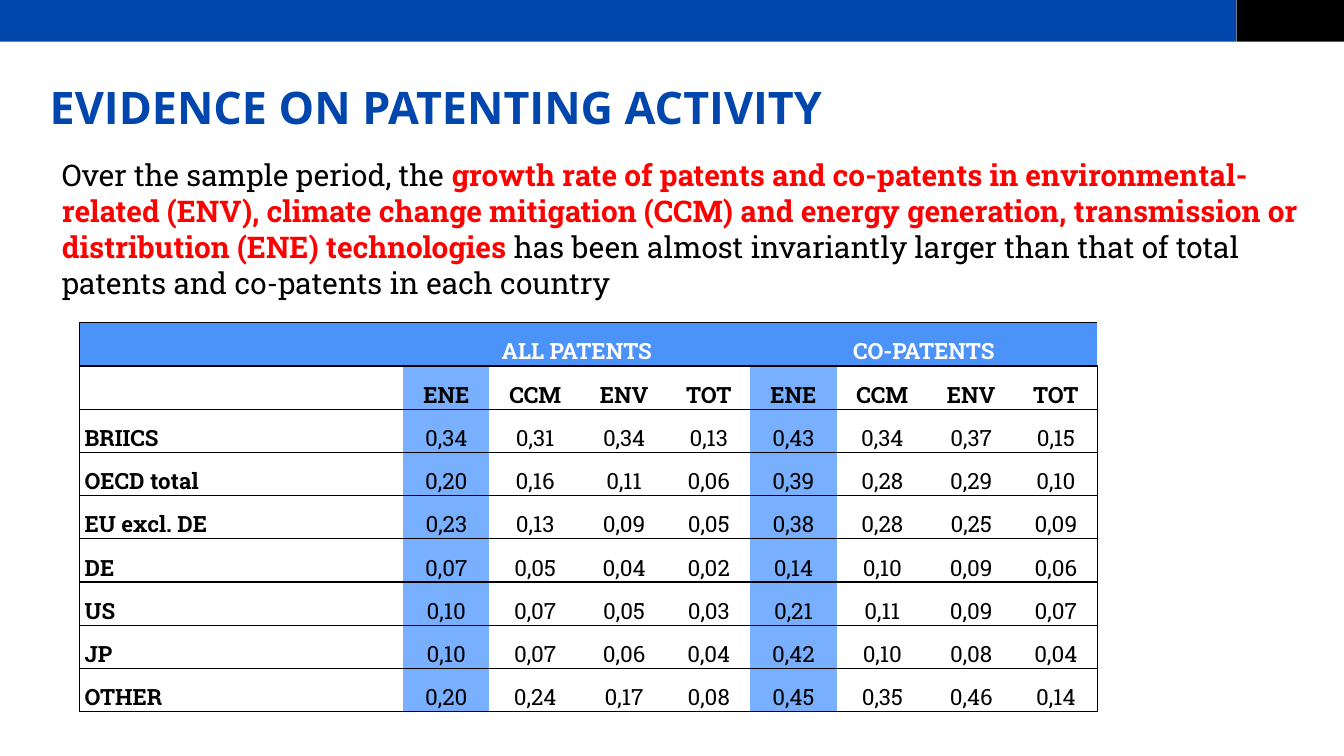
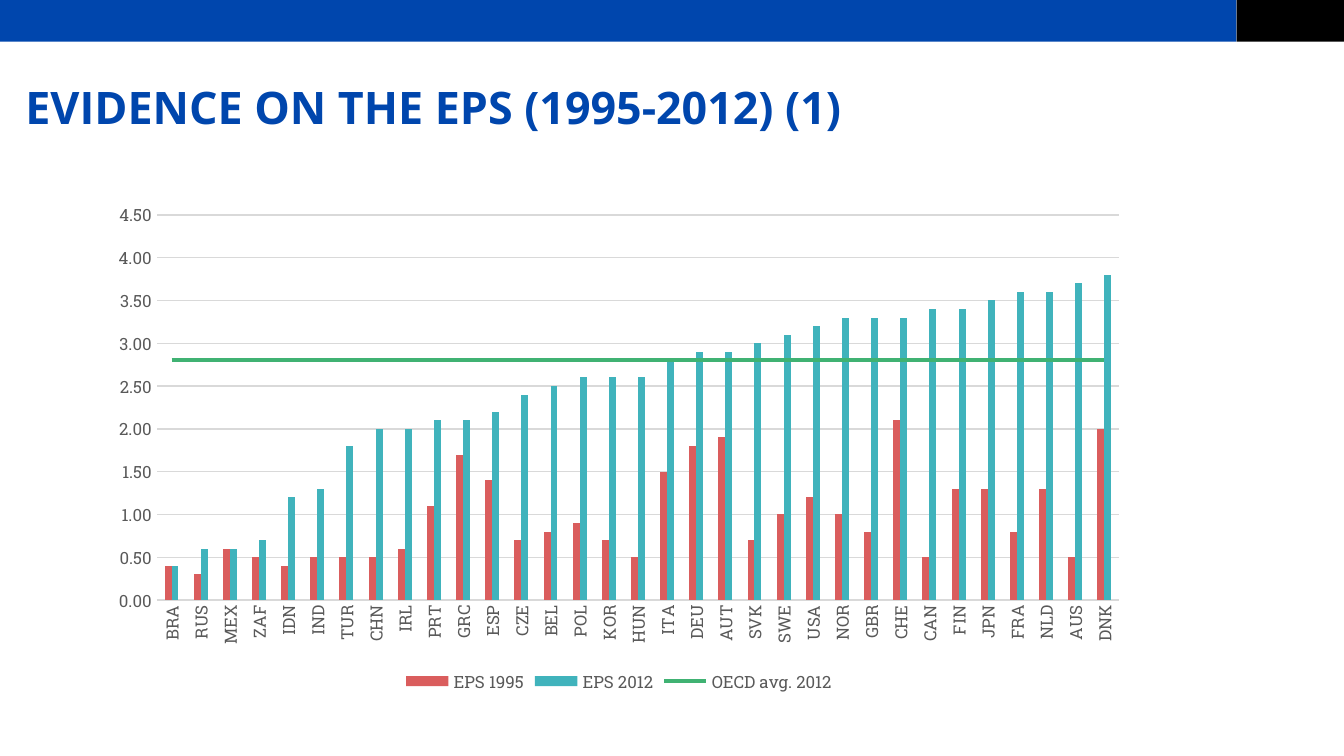
from collections import namedtuple

from lxml.etree import SubElement
from pptx import Presentation
from pptx.chart.data import CategoryChartData
from pptx.dml.color import RGBColor
from pptx.enum.chart import XL_CHART_TYPE, XL_LEGEND_POSITION, XL_MARKER_STYLE, XL_TICK_MARK
from pptx.enum.shapes import MSO_SHAPE
from pptx.enum.text import MSO_ANCHOR, MSO_AUTO_SIZE, PP_ALIGN
from pptx.oxml import parse_xml
from pptx.oxml.ns import nsdecls, qn
from pptx.util import Cm, Pt

Box = namedtuple("Box", "left top width height")

COLORS = {
    "brand": "0046AD", "black": "000000", "white": "FFFFFF", "alert": "FF0000",
    "header": "4B92F9", "highlight": "78AFFF", "label": "595959", "grid": "D9D9D9",
    "eps_1995": "DA5D5D", "eps_2012": "40B3BC", "average": "40B273",
}
TITLE_FONT, BODY_FONT = "Open Sans", "Roboto Slab"
SLIDE_WIDTH, SLIDE_HEIGHT = 25.4, 14.29
BAND_HEIGHT, BAND_SPLIT = 0.79, 23.37
SECTION_LAYOUT, TITLE_ONLY_LAYOUT = 2, 5

EVIDENCE = [
    ("Over the sample period, the ", False),
    ("growth rate of patents and co-patents in environmental-related (ENV), climate change "
     "mitigation (CCM) and energy generation, transmission or distribution (ENE) "
     "technologies ", True),
    ("has been almost invariantly larger than that of total patents and co-patents in each "
     "country", False),
]
PATENT_GROUPS = ["ALL PATENTS", "CO-PATENTS"]
TECHNOLOGIES = ["ENE", "CCM", "ENV", "TOT"]
GROWTH_RATES = {
    "BRIICS": "0,34 0,31 0,34 0,13 0,43 0,34 0,37 0,15",
    "OECD total": "0,20 0,16 0,11 0,06 0,39 0,28 0,29 0,10",
    "EU excl. DE": "0,23 0,13 0,09 0,05 0,38 0,28 0,25 0,09",
    "DE": "0,07 0,05 0,04 0,02 0,14 0,10 0,09 0,06",
    "US": "0,10 0,07 0,05 0,03 0,21 0,11 0,09 0,07",
    "JP": "0,10 0,07 0,06 0,04 0,42 0,10 0,08 0,04",
    "OTHER": "0,20 0,24 0,17 0,08 0,45 0,35 0,46 0,14",
}
REGION_WIDTH = 6.12
TECHNOLOGY_WIDTHS = [1.63, 1.73, 1.63, 1.57]

COUNTRIES = (
    "BRA RUS MEX ZAF IDN IND TUR CHN IRL PRT GRC ESP CZE BEL POL KOR HUN ITA DEU AUT SVK "
    "SWE USA NOR GBR CHE CAN FIN JPN FRA NLD AUS DNK"
).split()
EPS_1995 = [0.4, 0.3, 0.6, 0.5, 0.4, 0.5, 0.5, 0.5, 0.6, 1.1, 1.7, 1.4, 0.7, 0.8, 0.9, 0.7, 0.5,
            1.5, 1.8, 1.9, 0.7, 1, 1.2, 1, 0.8, 2.1, 0.5, 1.3, 1.3, 0.8, 1.3, 0.5, 2]
EPS_2012 = [0.4, 0.6, 0.6, 0.7, 1.2, 1.3, 1.8, 2, 2, 2.1, 2.1, 2.2, 2.4, 2.5, 2.6, 2.6, 2.6,
            2.8, 2.9, 2.9, 3, 3.1, 3.2, 3.3, 3.3, 3.3, 3.4, 3.4, 3.5, 3.6, 3.6, 3.7, 3.8]
OECD_AVERAGE = 2.8


def color(key):
    """Return the named colour."""
    return RGBColor.from_string(COLORS[key])


def style_font(font, size, key, bold=False, family=BODY_FONT):
    """Give a font its family, size, colour and weight."""
    font.name, font.size, font.bold = family, Pt(size), bold
    font.color.rgb = color(key)


def place(shape, box):
    """Move a shape into a box given in centimetres."""
    shape.left, shape.top, shape.width, shape.height = (Cm(length) for length in box)


def clear_margins(frame):
    """Remove the inner margins of a text frame."""
    frame.margin_left = frame.margin_top = frame.margin_right = frame.margin_bottom = 0


def add_bands(prs, slide):
    """Draw the top bands and move them to the slide master."""
    bands = [
        (Box(0, 0, BAND_SPLIT, BAND_HEIGHT), "brand"),
        (Box(BAND_SPLIT, 0, SLIDE_WIDTH - BAND_SPLIT, BAND_HEIGHT), "black"),
    ]
    for box, key in bands:
        band = slide.shapes.add_shape(MSO_SHAPE.RECTANGLE, *(Cm(length) for length in box))
        band.shadow.inherit = False
        band.fill.solid()
        band.fill.fore_color.rgb = color(key)
        band.line.fill.background()
        prs.slide_master.shapes.element.append(band.element)


def add_title(slide, heading, left):
    """Fill the title placeholder in the shared title style."""
    title = slide.shapes.title
    place(title, Box(left, 1.35, 21.06, 1.17))
    frame = title.text_frame
    frame.text = heading
    clear_margins(frame)
    frame.word_wrap = True
    frame.auto_size = MSO_AUTO_SIZE.SHAPE_TO_FIT_TEXT
    frame.vertical_anchor = MSO_ANCHOR.BOTTOM
    paragraph = frame.paragraphs[0]
    paragraph.alignment = PP_ALIGN.LEFT
    paragraph.line_spacing = Pt(35)
    style_font(paragraph.runs[0].font, 24, "brand", True, TITLE_FONT)


def add_evidence(slide, box):
    """Fill the body placeholder with the highlighted statement."""
    statement = slide.placeholders[1]
    place(statement, box)
    frame = statement.text_frame
    clear_margins(frame)
    frame.auto_size = MSO_AUTO_SIZE.NONE
    frame.vertical_anchor = MSO_ANCHOR.TOP
    paragraph = frame.paragraphs[0]
    paragraph.space_before, paragraph.space_after = Pt(0), Pt(4.5)
    for words, stressed in EVIDENCE:
        run = paragraph.add_run()
        run.text = words
        style_font(run.font, 16, "alert" if stressed else "black", stressed)


def set_borders(cell, sides):
    """Draw the given sides of a cell and hide the others."""
    properties = cell._tc.get_or_add_tcPr()
    for index, side in enumerate("LRTB"):
        paint = "<a:noFill/>"
        if side in sides:
            paint = f'<a:solidFill><a:srgbClr val="{COLORS["black"]}"/></a:solidFill>'
        border = f'<a:ln{side} {nsdecls("a")} w="{Pt(0.75)}">{paint}</a:ln{side}>'
        properties.insert(index, parse_xml(border))


def fill_cell(cell, words, key, bold, centred, fill):
    """Write and format one table cell."""
    cell.margin_left = cell.margin_right = Cm(0.1)
    cell.margin_top = cell.margin_bottom = 0
    cell.vertical_anchor = MSO_ANCHOR.BOTTOM
    if fill:
        cell.fill.solid()
        cell.fill.fore_color.rgb = color(fill)
    else:
        cell.fill.background()
    paragraph = cell.text_frame.paragraphs[0]
    paragraph.text = words
    paragraph.line_spacing = 1.07
    paragraph.alignment = PP_ALIGN.CENTER if centred else PP_ALIGN.LEFT
    for run in paragraph.runs:
        style_font(run.font, 12, key, bold)
    if not words:
        SubElement(paragraph._p, qn("a:endParaRPr"), sz="1200")


def add_growth_table(slide, box):
    """Build the table of patent growth rates."""
    span = len(TECHNOLOGIES)
    groups = [""]
    for group in PATENT_GROUPS:
        groups += [group] + [""] * (span - 1)
    rows = [groups, [""] + TECHNOLOGIES * len(PATENT_GROUPS)]
    rows += [[region] + rates.split() for region, rates in GROWTH_RATES.items()]
    widths = [REGION_WIDTH] + TECHNOLOGY_WIDTHS * len(PATENT_GROUPS)
    table = slide.shapes.add_table(
        len(rows), len(widths), *(Cm(length) for length in box)).table
    table.first_row = table.horz_banding = False
    for column, width in zip(table.columns, widths):
        column.width = Cm(width)
    for r, row in enumerate(rows):
        table.rows[r].height = Cm(box.height / len(rows))
        for c, words in enumerate(row):
            cell = table.cell(r, c)
            fill = "header" if r == 0 else "highlight" if c % span == 1 else None
            fill_cell(cell, words, "white" if r == 0 else "black", r < 2 or c == 0, c > 0, fill)
            set_borders(cell, "TB" + "L" * (c == 0) + "R" * (c == len(widths) - 1))
    for first in range(1, len(widths), span):
        table.cell(0, first).merge(table.cell(0, first + span - 1))


def turn_last_series_into_line(chart):
    """Move the last bar series to a line plot on the same axes."""
    bars = chart.plots[0]._element
    average = bars.findall(qn("c:ser"))[-1]
    for bar_only in average.findall(qn("c:invertIfNegative")):
        average.remove(bar_only)
    lines = parse_xml(
        f'<c:lineChart {nsdecls("c")}><c:grouping val="standard"/>'
        '<c:varyColors val="0"/><c:marker val="1"/></c:lineChart>')
    lines.insert(2, average)
    for axis in bars.findall(qn("c:axId")):
        SubElement(lines, qn("c:axId"), val=axis.get("val"))
    bars.addnext(lines)
    series = chart.plots[1].series[0]
    series.smooth = False
    series.marker.style = XL_MARKER_STYLE.NONE
    series.format.line.width = Pt(2.25)
    series.format.line.color.rgb = color("average")


def style_axes(chart):
    """Format the country and value axes."""
    countries, values = chart.category_axis, chart.value_axis
    for axis in (countries, values):
        axis.major_tick_mark = axis.minor_tick_mark = XL_TICK_MARK.NONE
        style_font(axis.tick_labels.font, 9, "label")
    labels = countries._element.find(qn("c:txPr"))
    labels.find(qn("a:bodyPr")).set("rot", "-5400000")
    values.minimum_scale, values.maximum_scale, values.major_unit = 0, 4.5, 0.5
    values.tick_labels.number_format = "0.00"
    values.tick_labels.number_format_is_linked = False
    values.format.line.fill.background()
    for line in (countries.format.line, values.major_gridlines.format.line):
        line.width = Pt(0.75)
        line.color.rgb = color("grid")


def add_eps_chart(slide, box):
    """Build the bar chart of EPS by country with the average line."""
    data = CategoryChartData(number_format="0.00")
    data.categories = COUNTRIES
    data.add_series("EPS 1995", EPS_1995)
    data.add_series("EPS 2012", EPS_2012)
    data.add_series("OECD avg. 2012", [OECD_AVERAGE] * len(COUNTRIES))
    chart = slide.shapes.add_chart(
        XL_CHART_TYPE.COLUMN_CLUSTERED, *(Cm(length) for length in box), data).chart
    chart.has_title = False
    style_font(chart.font, 10, "black")
    turn_last_series_into_line(chart)
    bars = chart.plots[0]
    bars.vary_by_categories = False
    bars.gap_width, bars.overlap = 219, 0
    for series, key in zip(bars.series, ("eps_1995", "eps_2012")):
        series.format.fill.solid()
        series.format.fill.fore_color.rgb = color(key)
    style_axes(chart)
    chart.has_legend = True
    chart.legend.position = XL_LEGEND_POSITION.BOTTOM
    chart.legend.include_in_layout = False
    style_font(chart.legend.font, 9, "label")


def build_patenting_slide(prs):
    """Add the slide on patenting activity."""
    slide = prs.slides.add_slide(prs.slide_layouts[SECTION_LAYOUT])
    add_title(slide, "EVIDENCE ON PATENTING ACTIVITY", 0.94)
    add_evidence(slide, Box(1.17, 2.97, 23.5, 3.45))
    add_growth_table(slide, Box(1.5, 6.1, 19.24, 7.36))
    return slide


def build_eps_slide(prs):
    """Add the slide on the EPS."""
    slide = prs.slides.add_slide(prs.slide_layouts[TITLE_ONLY_LAYOUT])
    add_title(slide, "EVIDENCE ON THE EPS (1995-2012) (1)", 0.48)
    add_eps_chart(slide, Box(1.85, 3.66, 19.69, 9.53))


def main():
    """Build and save the presentation."""
    prs = Presentation()
    prs.slide_width, prs.slide_height = Cm(SLIDE_WIDTH), Cm(SLIDE_HEIGHT)
    add_bands(prs, build_patenting_slide(prs))
    build_eps_slide(prs)
    prs.save("out.pptx")


if __name__ == "__main__":
    main()
